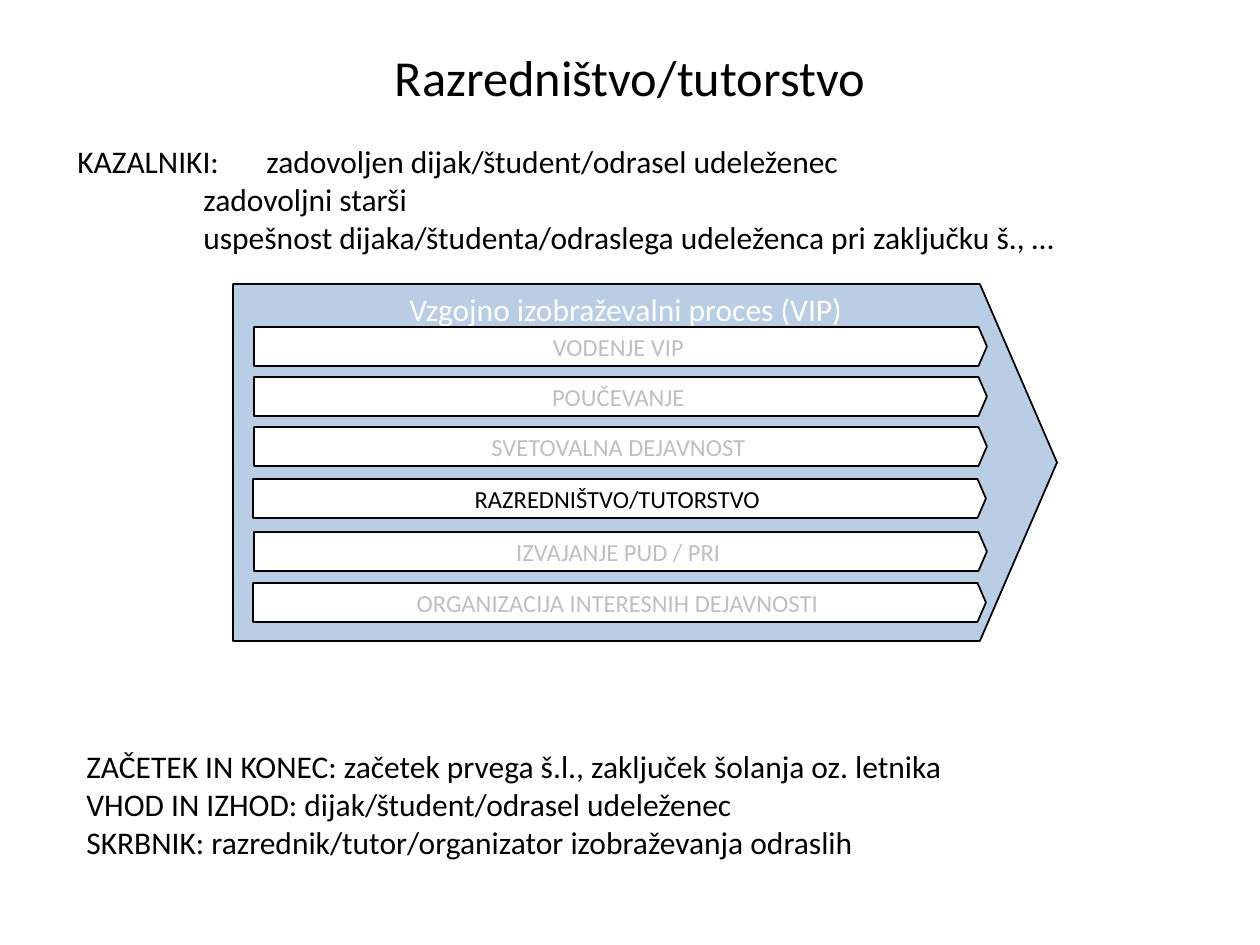
from pptx import Presentation
from pptx.dml.color import RGBColor
from pptx.enum.shapes import MSO_SHAPE
from pptx.enum.text import MSO_ANCHOR, MSO_AUTO_SIZE, PP_ALIGN
from pptx.util import Emu, Pt

SCALE = 914400 / 126
FONT = "Calibri"
BLACK = RGBColor(0x00, 0x00, 0x00)
WHITE = RGBColor(0xFF, 0xFF, 0xFF)
GREY = RGBColor(0xBF, 0xBF, 0xBF)
BLUE = RGBColor(0xB9, 0xCD, 0xE5)

TITLE = "Razredništvo/tutorstvo"
INDICATORS = [
    "KAZALNIKI: \tzadovoljen dijak/študent/odrasel udeleženec",
    "\t\tzadovoljni starši",
    "\t\tuspešnost dijaka/študenta/odraslega udeleženca pri zaključku š., …",
]
DETAILS = [
    "ZAČETEK IN KONEC: začetek prvega š.l., zaključek šolanja oz. letnika",
    "VHOD IN IZHOD: dijak/študent/odrasel udeleženec",
    "SKRBNIK: razrednik/tutor/organizator izobraževanja odraslih",
]
PROCESS = "Vzgojno izobraževalni proces (VIP)"
ACTIVITIES = [
    ("VODENJE VIP", 21, 43, GREY),
    ("POUČEVANJE", 21, 93, GREY),
    ("SVETOVALNA DEJAVNOST", 21, 143, GREY),
    ("RAZREDNIŠTVO/TUTORSTVO", 20, 195, BLACK),
    ("IZVAJANJE PUD / PRI", 21, 248, GREY),
    ("ORGANIZACIJA INTERESNIH DEJAVNOSTI", 20, 299, GREY),
]


def px(n):
    return Emu(round(n * SCALE))


def write(tf, lines, size, color, align, **frame):
    for name, value in {"word_wrap": True, **frame}.items():
        setattr(tf, name, value)
    for i, line in enumerate(lines):
        p = tf.paragraphs[0] if i == 0 else tf.add_paragraph()
        p.alignment = align
        r = p.add_run()
        r.text = line
        for name, value in {"name": FONT, "size": Pt(size)}.items():
            setattr(r.font, name, value)
        r.font.color.rgb = color


def add_title(s, x, y, w, h):
    sp = s.shapes.title
    box = {"left": x, "top": y, "width": w, "height": h}
    for name, value in box.items():
        setattr(sp, name, px(value))
    write(sp.text_frame, [TITLE], 28.8, BLACK, PP_ALIGN.CENTER,
          vertical_anchor=MSO_ANCHOR.MIDDLE, auto_size=MSO_AUTO_SIZE.NONE)


def add_lines(s, lines, x, y, w, h):
    sp = s.shapes.add_textbox(px(x), px(y), px(w), px(h))
    write(sp.text_frame, lines, 18, BLACK, PP_ALIGN.LEFT,
          auto_size=MSO_AUTO_SIZE.SHAPE_TO_FIT_TEXT)


def add_arrow(s, label, x, y, w, h, fill, size, color, anchor):
    sp = s.shapes.add_shape(MSO_SHAPE.PENTAGON, px(x), px(y), px(w), px(h))
    sp.adjustments[0] = 0.216
    sp.shadow.inherit = False
    sp.fill.solid()
    sp.fill.fore_color.rgb = fill
    sp.line.color.rgb = BLACK
    sp.line.width = Pt(1)
    write(sp.text_frame, [label], size, color, PP_ALIGN.CENTER, vertical_anchor=anchor)


def add_process(s, x, y, w, h):
    add_arrow(s, PROCESS, x, y, w, h, BLUE, 18, WHITE, MSO_ANCHOR.TOP)
    for label, dx, dy, color in ACTIVITIES:
        add_arrow(s, label, x + dx, y + dy, w - 91, 39, WHITE, 14, color, MSO_ANCHOR.MIDDLE)


def main():
    prs = Presentation()
    prs.slide_width, prs.slide_height = px(1260), px(945)
    s = prs.slides.add_slide(prs.slide_layouts[5])
    add_title(s, 63, 38, 1134, 77)
    add_lines(s, INDICATORS, 65, 136, 1140, 127)
    add_process(s, 233, 284, 824, 357)
    add_lines(s, DETAILS, 74, 741, 1032, 127)
    prs.save("out.pptx")


if __name__ == "__main__":
    main()
